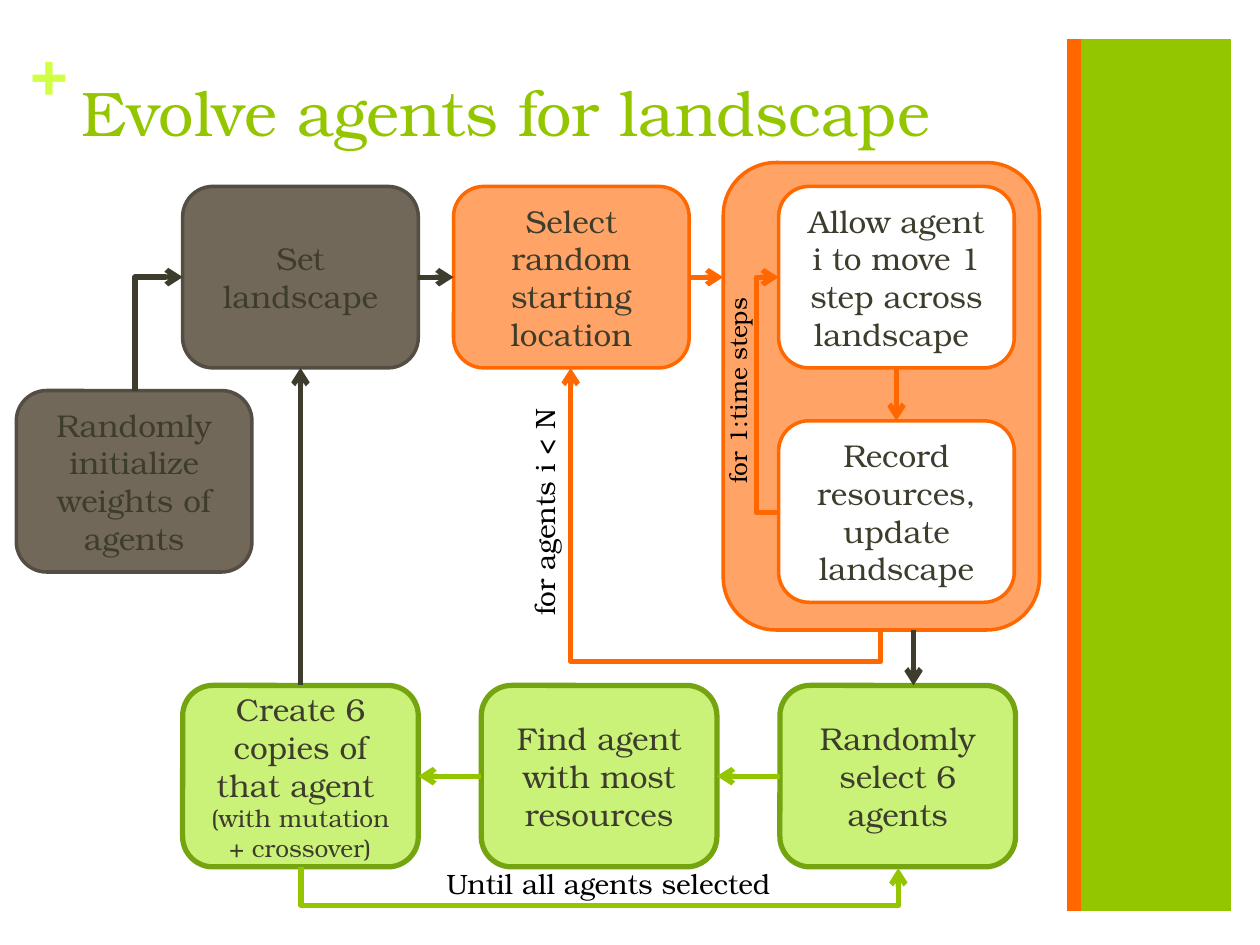
"""Build the flowchart slide on evolving agents for a landscape."""
from dataclasses import dataclass

from lxml.etree import SubElement
from pptx import Presentation
from pptx.dml.color import RGBColor
from pptx.enum.shapes import MSO_CONNECTOR as Link, MSO_SHAPE as Shape
from pptx.enum.text import MSO_ANCHOR as Anchor, PP_ALIGN as Align
from pptx.oxml.ns import qn
from pptx.util import Inches, Pt


@dataclass(frozen=True)
class Theme:
    font: str = "TeX Gyre Bonum"
    green: str = "94C600"
    lime: str = "D0FF44"
    orange: str = "FF6700"
    peach: str = "FFA466"
    ink: str = "3E3D2D"
    black: str = "000000"
    setup: tuple = ("71685A", "544D43", 2)
    agent: tuple = ("FFA466", "FF6700", 2)
    step: tuple = ("FFFFFF", "FF6700", 2)
    selection: tuple = ("CAF278", "74A510", 3)
    title_size: int = 36
    body_size: int = 18
    label_size: int = 16
    small_size: int = 14
    arrow_width: int = 3


theme = Theme()
TOP, LEFT, BOTTOM, RIGHT = range(4)


def write(frame, lines, color, align=Align.CENTER, bold=None):
    frame.word_wrap = True
    for number, (text, size) in enumerate(lines):
        paragraph = frame.add_paragraph() if number else frame.paragraphs[0]
        paragraph.text = text
        paragraph.alignment = align
        paragraph.font.name = theme.font
        paragraph.font.size = Pt(size)
        paragraph.font.bold = bold
        paragraph.font.color.rgb = RGBColor.from_string(color)


def add_arrow(kind, start, end, color):
    arrow = shapes.add_connector(kind, *map(Inches, start + end))
    arrow.line.color.rgb = RGBColor.from_string(color)
    arrow.line.width = Pt(theme.arrow_width)
    properties = arrow.element.spPr
    SubElement(properties.find(qn("a:ln")), qn("a:tailEnd"), type="arrow")
    SubElement(properties, qn("a:effectLst"))
    return arrow


prs = Presentation()
prs.slide_width, prs.slide_height = Inches(10), Inches(7.5)
slide = prs.slides.add_slide(prs.slide_layouts[5])
shapes = slide.shapes

title = shapes.title
title.left, title.top = Inches(0.55), Inches(0.53)
title.width, title.height = Inches(8.26), Inches(1.22)
title.text_frame.vertical_anchor = Anchor.TOP
write(title.text_frame, [("Evolve agents for landscape", theme.title_size)],
      theme.green, Align.LEFT)

for left, width, color in [(8.57, 1.2, theme.green), (8.47, 0.11, theme.orange)]:
    band = shapes.add_shape(Shape.RECTANGLE, Inches(left), Inches(0.31),
                            Inches(width), Inches(6.92))
    band.shadow.inherit = False
    band.fill.solid()
    band.fill.fore_color.rgb = RGBColor.from_string(color)
    band.line.fill.background()

plus = shapes.add_textbox(Inches(0.24), Inches(0.25), Inches(0.29), Inches(0.61)).text_frame
plus.margin_left = plus.margin_right = plus.margin_top = plus.margin_bottom = 0
write(plus, [("+", theme.title_size)], theme.lime, Align.LEFT, True)

box_width, box_height = 1.87, 1.44
top_row, bottom_row = 1.48, 5.44
stages = {
    "loop": (5.74, 1.29, 2.51, 3.71, theme.agent, []),
}
for stage, left, top, style, text in [
    ("landscape", 1.45, top_row, theme.setup, "Set landscape"),
    ("location", 3.6, top_row, theme.agent, "Select random starting location"),
    ("move", 6.18, top_row, theme.step, "Allow agent i to move 1 step across landscape "),
    ("record", 6.18, 3.34, theme.step, "Record resources, update landscape"),
    ("sample", 6.19, bottom_row, theme.selection, "Randomly select 6 agents"),
    ("best", 3.82, bottom_row, theme.selection, "Find agent with most resources"),
    ("copies", 1.45, bottom_row, theme.selection, "Create 6 copies of that agent "),
    ("weights", 0.13, 3.1, theme.setup, "Randomly initialize weights of agents"),
]:
    stages[stage] = (left, top, box_width, box_height, style, [(text, theme.body_size)])
stages["copies"][-1].append(("(with mutation + crossover)", theme.small_size))

boxes = {}
for stage, (left, top, width, height, (fill, outline, weight), lines) in stages.items():
    box = shapes.add_shape(Shape.ROUNDED_RECTANGLE, Inches(left), Inches(top),
                           Inches(width), Inches(height))
    box.shadow.inherit = False
    box.fill.solid()
    box.fill.fore_color.rgb = RGBColor.from_string(fill)
    box.line.color.rgb = RGBColor.from_string(outline)
    box.line.width = Pt(weight)
    box.text_frame.vertical_anchor = Anchor.MIDDLE
    write(box.text_frame, lines, theme.ink)
    boxes[stage] = box

for source, source_side, target, target_side, color in [
    ("landscape", RIGHT, "location", LEFT, theme.ink),
    ("move", BOTTOM, "record", TOP, theme.orange),
    ("sample", LEFT, "best", RIGHT, theme.green),
    ("best", LEFT, "copies", RIGHT, theme.green),
    ("copies", TOP, "landscape", BOTTOM, theme.ink),
]:
    arrow = add_arrow(Link.STRAIGHT, (0, 0), (1, 1), color)
    arrow.begin_connect(boxes[source], source_side)
    arrow.end_connect(boxes[target], target_side)

into_loop = add_arrow(Link.STRAIGHT, (5.47, 2.2), (5.74, 2.2), theme.orange)
into_loop.begin_connect(boxes["location"], RIGHT)
add_arrow(Link.STRAIGHT, (7.25, 5), (7.25, 5.44), theme.ink)

for start, end, turn, rotation, flips, color in [
    ((6.19, 4.07), (6.18, 2.2), 6, 180, (), theme.orange),
    ((6.99, 5), (4.53, 2.92), 5.25, 90, ("flipH",), theme.orange),
    ((1.07, 3.1), (1.45, 2.2), None, 90, ("flipH", "flipV"), theme.ink),
    ((2.39, 6.88), (7.13, 6.89), 7.19, 270, ("flipH",), theme.green),
]:
    axis = 0 if rotation == 180 else 1
    width, height = abs(end[axis] - start[axis]), abs(end[1 - axis] - start[1 - axis])
    left = (start[0] + end[0] - width) / 2
    top = (start[1] + end[1] - height) / 2
    elbow = add_arrow(Link.ELBOW, (left, top), (left + width, top + height), color)
    frame = elbow.element.spPr.find(qn("a:xfrm"))
    frame.set("rot", str(rotation * 60000))
    for flip in flips:
        frame.set(flip, "1")
    geometry = elbow.element.spPr.find(qn("a:prstGeom"))
    if turn is None:
        geometry.set("prst", "bentConnector2")
    else:
        bend = round((turn - start[axis]) / (end[axis] - start[axis]) * 100000)
        SubElement(geometry.find(qn("a:avLst")), qn("a:gd"), name="adj1", fmla=f"val {bend}")

for text, left, top, width, height, rotation, size in [
    ("for agents i < N", 3.3, 3.88, 2.05, 0.37, 270, theme.label_size),
    ("for 1:time steps", 4.93, 2.93, 1.85, 0.34, 270, theme.small_size),
    ("Until all agents selected", 3.28, 6.83, 3.1, 0.37, 0, theme.label_size),
]:
    label = shapes.add_textbox(Inches(left), Inches(top), Inches(width), Inches(height))
    label.rotation = rotation
    write(label.text_frame, [(text, size)], theme.black)

prs.save("out.pptx")
